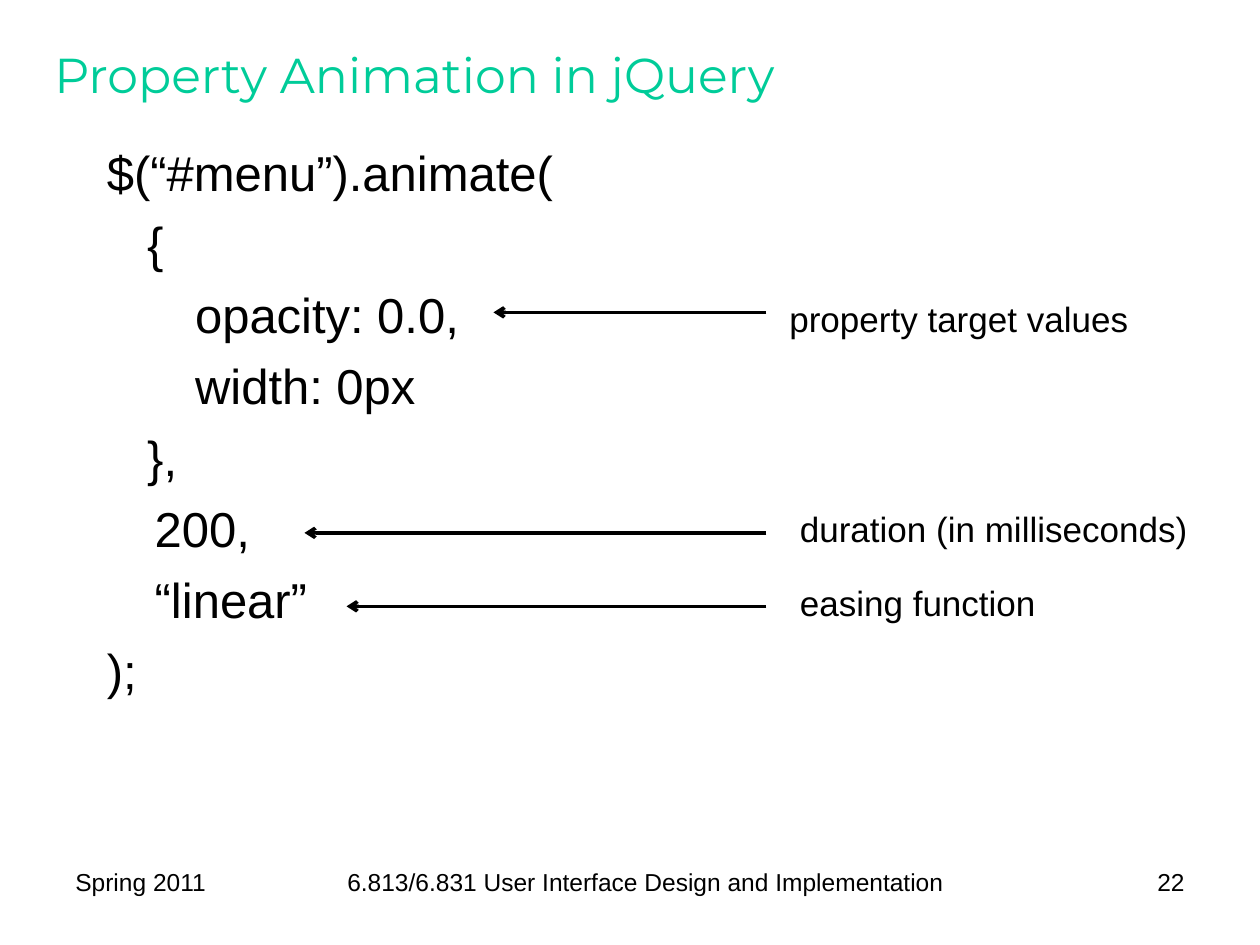
"""Build a slide that explains the arguments of a jQuery property animation."""
from dataclasses import dataclass

from lxml.etree import SubElement
from pptx import Presentation
from pptx.dml.color import RGBColor
from pptx.enum.shapes import MSO_CONNECTOR
from pptx.enum.text import MSO_ANCHOR, PP_ALIGN
from pptx.oxml.ns import qn
from pptx.util import Inches, Pt

TITLE = "Property Animation in jQuery"
CODE_LINES = [
    ("$(“#menu”).animate(", 0),
    ("{", 0.32),
    ("opacity: 0.0,", 0.7),
    ("width: 0px", 0.7),
    ("},", 0.32),
    ("200,", 0.38),
    ("“linear”", 0.38),
    (");", 0),
]
CALLOUTS = [
    {"text": "property target values", "label": (74, 27.75, 35, 5.25), "tip": 47, "row": 29.75},
    {"text": "duration (in milliseconds)", "label": (75, 47.75, 39.6, 5.25), "tip": 29, "row": 50.75},
    {"text": "easing function", "label": (75, 54.75, 25, 5.25), "tip": 33, "row": 57.75},
]
FOOTERS = [
    ("Spring 2011", 6, 18, PP_ALIGN.LEFT),
    ("6.813/6.831 User Interface Design and Implementation", 25, 73, PP_ALIGN.CENTER),
    ("22", 99, 15, PP_ALIGN.RIGHT),
]

COLUMNS, ROWS = 120, 90
TITLE_AREA = (4, 2, 111, 10)
CODE_AREA = (9, 13, 102, 67)
FOOTER_TOP, FOOTER_HEIGHT = 82, 6.25
ARROW_START = 73


@dataclass(frozen=True)
class Theme:
    accent: RGBColor = RGBColor(0x00, 0xCC, 0x99)
    ink: RGBColor = RGBColor(0, 0, 0)
    title_font: str = "Montserrat"
    body_font: str = "Arial"
    large: int = 28
    label: int = 20
    footer: int = 14
    code_gap: int = 7
    line: int = 2


THEME = Theme()
deck = Presentation()
deck.slide_width, deck.slide_height = Inches(10), Inches(7.5)
page = deck.slides.add_slide(deck.slide_layouts[6])


def across(column):
    return round(deck.slide_width * column / COLUMNS)


def down(row):
    return round(deck.slide_height * row / ROWS)


def add_text(area, text, size, font=THEME.body_font, color=THEME.ink,
             align=PP_ALIGN.LEFT, anchor=MSO_ANCHOR.TOP, wrap=True):
    left, top, width, height = area
    box = page.shapes.add_textbox(across(left), down(top), across(width), down(height))
    frame = box.text_frame
    frame.text = text
    frame.word_wrap = wrap
    frame.vertical_anchor = anchor
    for paragraph in frame.paragraphs:
        paragraph.alignment = align
        for span in paragraph.runs:
            span.font.size = Pt(size)
            span.font.name = font
            span.font.color.rgb = color
    return box


def add_arrow(tip, row):
    arrow = page.shapes.add_connector(
        MSO_CONNECTOR.STRAIGHT, across(ARROW_START), down(row), across(tip), down(row))
    arrow.line.color.rgb = THEME.ink
    arrow.line.width = Pt(THEME.line)
    SubElement(arrow.line._get_or_add_ln(), qn("a:tailEnd"), type="arrow")
    SubElement(arrow._element.spPr, qn("a:effectLst"))


add_text(TITLE_AREA, TITLE, THEME.large, THEME.title_font, THEME.accent,
         anchor=MSO_ANCHOR.MIDDLE)

code = add_text(CODE_AREA, "\n".join(text for text, indent in CODE_LINES), THEME.large)
for paragraph, (text, indent) in zip(code.text_frame.paragraphs, CODE_LINES):
    paragraph.space_before = Pt(THEME.code_gap)
    paragraph._p.get_or_add_pPr().set("marL", str(Inches(indent)))

for callout in CALLOUTS:
    add_arrow(callout["tip"], callout["row"])
    add_text(callout["label"], callout["text"], THEME.label, wrap=False)

for text, left, width, align in FOOTERS:
    add_text((left, FOOTER_TOP, width, FOOTER_HEIGHT), text, THEME.footer, align=align)

deck.save("out.pptx")
